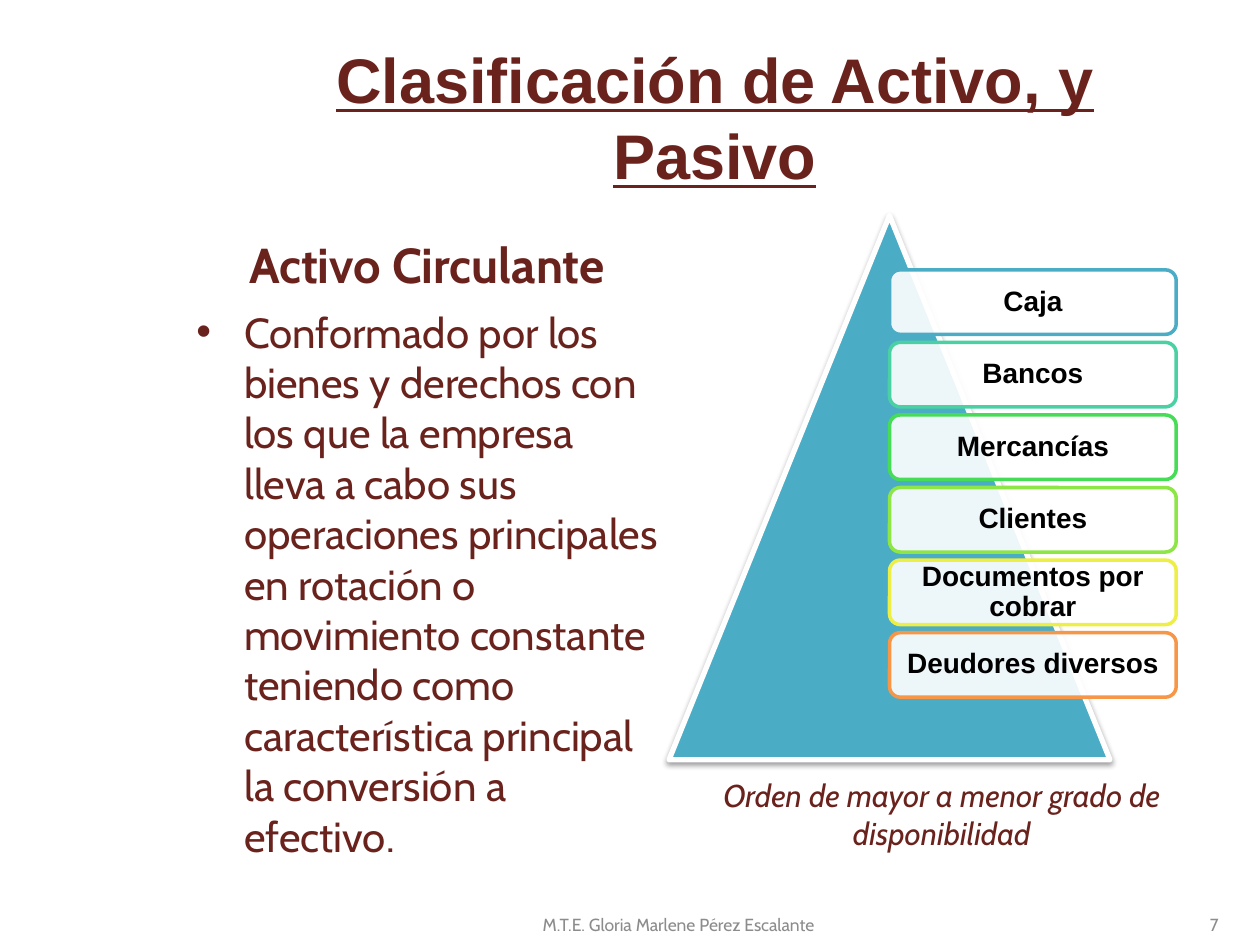
from lxml import etree
from pptx import Presentation
from pptx.dml.color import RGBColor
from pptx.enum.shapes import MSO_SHAPE
from pptx.enum.text import MSO_ANCHOR, PP_ALIGN
from pptx.oxml import parse_xml
from pptx.oxml.ns import nsdecls, qn
from pptx.util import Inches, Pt

TRIANGLE = MSO_SHAPE.ISOSCELES_TRIANGLE
ROUNDED = MSO_SHAPE.ROUNDED_RECTANGLE
TOP, MIDDLE, BOTTOM = MSO_ANCHOR.TOP, MSO_ANCHOR.MIDDLE, MSO_ANCHOR.BOTTOM
LEFT, CENTER, RIGHT = PP_ALIGN.LEFT, PP_ALIGN.CENTER, PP_ALIGN.RIGHT

COLORS = {
    "text": "6A221D", "muted": "8C8C8C", "black": "000000", "white": "FFFFFF",
    "blue": "4BACC6", "teal": "49D1A3", "green": "47DC57",
    "lime": "8DE646", "yellow": "EEEF46", "orange": "F79646",
}
ACCOUNTS = [
    ("Caja", "blue"), ("Bancos", "teal"), ("Mercancías", "green"),
    ("Clientes", "lime"), ("Documentos por cobrar", "yellow"),
    ("Deudores diversos", "orange"),
]
DEFINITION = (
    "Conformado por los bienes y derechos con los que la empresa lleva a cabo "
    "sus operaciones principales en rotación o movimiento constante teniendo "
    "como característica principal la conversión a efectivo."
)


def rgb(name):
    """Return the named colour."""
    return RGBColor.from_string(COLORS[name])


def write_text(shape, text, size, color="text", font="Cabin", align=CENTER, anchor=TOP,
               bold=False, italic=False, underline=False, bullet=None, spacing=None):
    """Fill a shape with one formatted paragraph."""
    frame = shape.text_frame
    frame.word_wrap = True
    frame.vertical_anchor = anchor
    paragraph = frame.paragraphs[0]
    paragraph.text = text
    paragraph.alignment = align
    paragraph.line_spacing = spacing
    if bullet:
        properties = paragraph._p.get_or_add_pPr()
        properties.set("marL", str(Inches(0.38)))
        properties.set("indent", str(Inches(-0.38)))
        etree.SubElement(properties, qn("a:buFont"), typeface="Arial")
        etree.SubElement(properties, qn("a:buChar"), char=bullet)
    run_font = paragraph.runs[0].font
    run_font.name, run_font.size = font, Pt(size)
    run_font.bold, run_font.italic, run_font.underline = bold, italic, underline
    run_font.color.rgb = rgb(color)


def add_text(slide, box, text, size, **style):
    """Add a text box at left, top, width, height in inches."""
    shape = slide.shapes.add_textbox(*map(Inches, box))
    write_text(shape, text, size, **style)


def add_outlined(shapes, kind, box, fill, line, width):
    """Add a filled preset shape with a coloured outline."""
    shape = shapes.add_shape(kind, *map(Inches, box))
    shape.shadow.inherit = False
    shape.fill.solid()
    shape.fill.fore_color.rgb = rgb(fill)
    shape.line.color.rgb = rgb(line)
    shape.line.width = Pt(width)
    return shape


def add_shadow(shape):
    """Give a shape a soft shadow below it."""
    effects = shape._element.spPr.find(qn("a:effectLst"))
    effects.append(parse_xml(
        f'<a:outerShdw {nsdecls("a")} blurRad="{Pt(3.1)}" dist="{Pt(1.6)}" '
        f'dir="5400000" rotWithShape="0"><a:srgbClr val="{COLORS["black"]}">'
        '<a:alpha val="38000"/></a:srgbClr></a:outerShdw>'))


def add_account(shapes, box, name, color):
    """Add a translucent rounded box that names an account."""
    shape = add_outlined(shapes, ROUNDED, box, "white", color, 2)
    fill_color = shape._element.spPr.find(qn("a:solidFill"))[0]
    etree.SubElement(fill_color, qn("a:alpha"), val="90000")
    frame = shape.text_frame
    frame.margin_left = frame.margin_right = Inches(0.07)
    frame.margin_top = frame.margin_bottom = Inches(0.07)
    write_text(shape, name, 16, color="black", font="Arial", anchor=MIDDLE,
               bold=True, spacing=0.9)


def add_pyramid(slide, box):
    """Add the triangle with its column of accounts."""
    left, top, width, height = box
    shapes = slide.shapes.add_group_shape().shapes
    add_shadow(add_outlined(shapes, TRIANGLE, box, "blue", "white", 3))
    account_width, account_height = width * 0.65, height * 0.1185
    for index, (name, color) in enumerate(ACCOUNTS):
        account_top = top + height * 0.1 + index * account_height * 1.125
        account_box = (left + width / 2, account_top, account_width, account_height)
        add_account(shapes, account_box, name, color)


def add_definition(slide, box):
    """Add the heading and the bulleted definition below it."""
    left, top, width, height = box
    heading = 0.7
    add_text(slide, (left, top, width, heading), "Activo Circulante", 28,
             anchor=BOTTOM, bold=True)
    add_text(slide, (left, top + heading, width, height - heading), DEFINITION, 24,
             align=LEFT, bullet="•")


def add_footer(slide, box):
    """Add the author and the slide number."""
    left, top, width, height = box
    add_text(slide, (left, top, 3.17, height), "M.T.E. Gloria Marlene Pérez Escalante",
             10, color="muted", anchor=MIDDLE)
    add_text(slide, (left + width - 2.33, top, 2.33, height), "7", 10,
             color="muted", align=RIGHT, anchor=MIDDLE)


def main():
    """Build and save the slide."""
    presentation = Presentation()
    presentation.slide_width, presentation.slide_height = Inches(10), Inches(7.5)
    slide = presentation.slides.add_slide(presentation.slide_layouts[6])
    add_text(slide, (1.85, 0.3, 7.65, 1.25), "Clasificación de Activo, y Pasivo", 36,
             font="Arial", anchor=MIDDLE, bold=True, underline=True)
    add_definition(slide, (1.46, 1.68, 3.86, 5.02))
    add_pyramid(slide, (5.31, 1.71, 3.5, 4.32))
    add_footer(slide, (3.8, 7.14, 5.97, 0.4))
    add_text(slide, (5.31, 6.11, 4.33, 0.71),
             "Orden de mayor a menor grado de disponibilidad", 18, italic=True)
    presentation.save("out.pptx")


if __name__ == "__main__":
    main()
